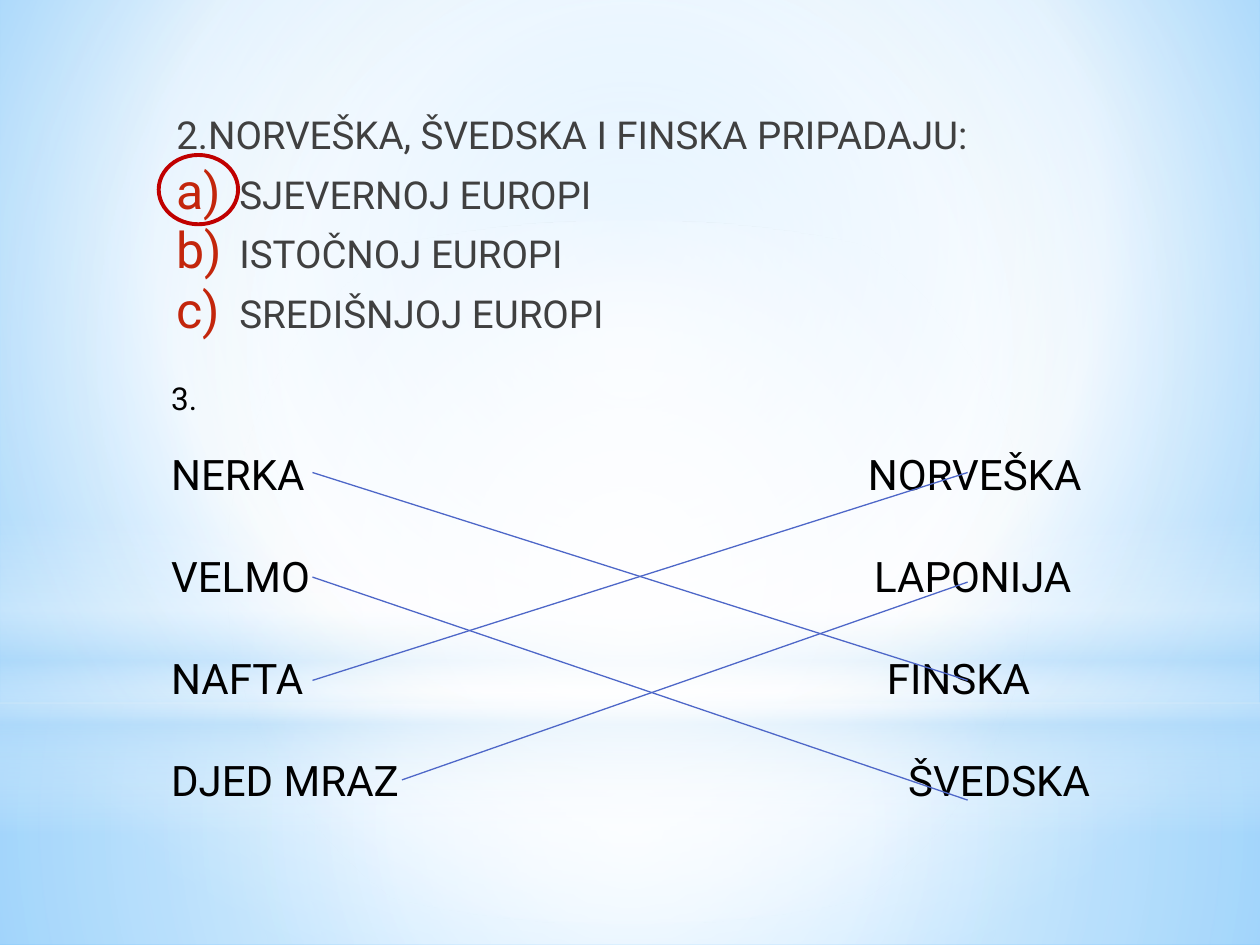
from typing import NamedTuple, Optional

from lxml import etree
from pptx import Presentation
from pptx.dml.color import RGBColor
from pptx.enum import shapes, text
from pptx.oxml.ns import qn
from pptx.util import Inches, Pt

FONT = "Roboto"
COLORS = {
    "sky": "9ED5FF",
    "deep_sky": "5BB9FF",
    "mist": "B4DCFA",
    "white": "FFFFFF",
    "question": "404040",
    "letter": "C3260C",
    "ring": "C00000",
    "match": "4E67C8",
    "black": "000000",
}


class Stop(NamedTuple):
    position: int
    color: str
    opacity: int = 100


class Backdrop(NamedTuple):
    kind: shapes.MSO_SHAPE
    top: float
    height: float
    stops: list[Stop]
    angle: Optional[int] = None


class Pair(NamedTuple):
    left: str
    right: str
    tab: float


class Match(NamedTuple):
    x1: float
    y1: float
    y2: float


RECTANGLE, OVAL = shapes.MSO_SHAPE.RECTANGLE, shapes.MSO_SHAPE.OVAL
CENTER = (50, 50, 50, 50)
BACKDROPS = [
    Backdrop(RECTANGLE, 5.58, 1.92,
             [Stop(0, "white", 91), Stop(37, "white", 76), Stop(100, "mist", 79)]),
    Backdrop(RECTANGLE, 0, 5.58,
             [Stop(0, "white", 89), Stop(48, "white", 62), Stop(100, "mist", 79)]),
    Backdrop(RECTANGLE, 4.12, 2.5,
             [Stop(0, "white", 0), Stop(29, "white", 30), Stop(45, "mist", 40),
              Stop(55, "white", 26), Stop(65, "mist", 60), Stop(100, "white", 0)], 90),
    Backdrop(OVAL, 1.75, 5.58, [Stop(0, "white"), Stop(56, "white", 0)]),
]
QUESTION = "2.NORVEŠKA, ŠVEDSKA I FINSKA PRIPADAJU:"
ANSWERS = ["SJEVERNOJ EUROPI", "ISTOČNOJ EUROPI", "SREDIŠNJOJ EUROPI"]
PAIRS = [
    Pair("NERKA", "NORVEŠKA", 5.53),
    Pair("VELMO", "LAPONIJA", 5.58),
    Pair("NAFTA", "FINSKA", 5.68),
    Pair("DJED MRAZ", "ŠVEDSKA", 5.85),
]
MATCH_END = 7.68
MATCHES = [
    Match(3.19, 6.19, 4.62),
    Match(2.48, 3.75, 5.4),
    Match(2.48, 5.4, 3.75),
    Match(2.48, 4.58, 6.35),
]


def rgb(name: str) -> RGBColor:
    return RGBColor.from_string(COLORS[name])


def add_child(parent, tag: str, **attributes):
    return etree.SubElement(parent, qn(tag), {k: str(v) for k, v in attributes.items()})


def set_gradient(fill, owner, stops: list[Stop], focus=CENTER, angle=None) -> None:
    """Fill owner with a linear gradient, or a circular one when angle is None."""
    fill.gradient()
    gradient = owner.find(".//" + qn("a:gradFill"))
    for child in list(gradient):
        gradient.remove(child)
    stop_list = add_child(gradient, "a:gsLst")
    for stop in stops:
        entry = add_child(stop_list, "a:gs", pos=stop.position * 1000)
        color = add_child(entry, "a:srgbClr", val=COLORS[stop.color])
        if stop.opacity < 100:
            add_child(color, "a:alpha", val=stop.opacity * 1000)
    if angle is None:
        circle = add_child(gradient, "a:path", path="circle")
        add_child(circle, "a:fillToRect",
                  **{side: value * 1000 for side, value in zip("ltrb", focus)})
    else:
        add_child(gradient, "a:lin", ang=angle * 60000, scaled=0)


def add_backdrop(slide, backdrop: Backdrop) -> None:
    shape = slide.shapes.add_shape(backdrop.kind, 0, Inches(backdrop.top),
                                   Inches(10), Inches(backdrop.height))
    shape.shadow.inherit = False
    shape.line.fill.background()
    set_gradient(shape.fill, shape.element, backdrop.stops, angle=backdrop.angle)


def style(paragraph, size: float, color: str) -> None:
    paragraph.font.name = FONT
    paragraph.font.size = Pt(size)
    paragraph.font.color.rgb = rgb(color)


def fill_question(body) -> None:
    body.left, body.top, body.width, body.height = map(Inches, (1.25, 0.8, 7, 2.08))
    frame = body.text_frame
    frame.auto_size = text.MSO_AUTO_SIZE.NONE
    frame.vertical_anchor = text.MSO_ANCHOR.TOP
    frame.margin_top = Inches(0.08)
    frame.text = "\n".join([QUESTION, *ANSWERS])
    for index, paragraph in enumerate(frame.paragraphs):
        properties = paragraph._p.get_or_add_pPr()
        properties.set("marL", str(Inches(0.55 if index else 0.05)))
        properties.set("indent", str(Inches(-0.5 if index else 0)))
        if index:
            color = add_child(properties, "a:buClr")
            add_child(color, "a:srgbClr", val=COLORS["letter"])
            add_child(properties, "a:buSzPct", val=130000)
            add_child(properties, "a:buFont", typeface=FONT)
            add_child(properties, "a:buAutoNum", type="alphaLcParenR")
        else:
            add_child(properties, "a:buNone")
        paragraph.space_before = Pt(4.7 if index else 0)
        paragraph.space_after = Pt(3)
        style(paragraph, 22, "question")


def add_text_box(slide, left: float, top: float, width: float, height: float):
    box = slide.shapes.add_textbox(*map(Inches, (left, top, width, height)))
    box.text_frame.word_wrap = True
    return box.text_frame


def add_pairs(slide) -> None:
    frame = add_text_box(slide, 1.26, 3.51, 8.55, 3.33)
    frame.text = "\n".join(f"{pair.left}\t{pair.right}" for pair in PAIRS)
    for index, (paragraph, pair) in enumerate(zip(frame.paragraphs, PAIRS)):
        tabs = add_child(paragraph._p.get_or_add_pPr(), "a:tabLst")
        add_child(tabs, "a:tab", pos=Inches(pair.tab), algn="l")
        paragraph.space_before = Pt(29.6 if index else 0)
        style(paragraph, 24, "black")


def add_match(slide, match: Match) -> None:
    line = slide.shapes.add_connector(
        shapes.MSO_CONNECTOR.STRAIGHT,
        *map(Inches, (match.x1, match.y1, MATCH_END, match.y2)))
    line.line.color.rgb = rgb("match")
    line.line.width = Pt(0.75)
    add_child(line.element.spPr, "a:effectLst")


def add_ring(slide) -> None:
    ring = slide.shapes.add_shape(OVAL, *map(Inches, (1.26, 1.23, 0.63, 0.55)))
    ring.shadow.inherit = False
    ring.fill.background()
    ring.line.color.rgb = rgb("ring")
    ring.line.width = Pt(2.25)


def main() -> None:
    presentation = Presentation()
    presentation.slide_width, presentation.slide_height = Inches(10), Inches(7.5)
    slide = presentation.slides.add_slide(presentation.slide_layouts[1])
    title, body = slide.shapes.title, slide.placeholders[1]
    tree = body.element.getparent()
    tree.remove(title.element)

    set_gradient(slide.background.fill, slide.element,
                 [Stop(0, "sky"), Stop(60, "white"), Stop(100, "deep_sky")],
                 focus=(20, 10, 20, 60))
    for backdrop in BACKDROPS:
        add_backdrop(slide, backdrop)
    tree.append(body.element)  # in front of the backdrops
    fill_question(body)
    add_ring(slide)
    add_pairs(slide)
    for match in MATCHES:
        add_match(slide, match)
    number = add_text_box(slide, 1.26, 2.96, 1.93, 0.4)
    number.text = "3."
    style(number.paragraphs[0], 18, "black")
    presentation.save("out.pptx")


if __name__ == "__main__":
    main()
